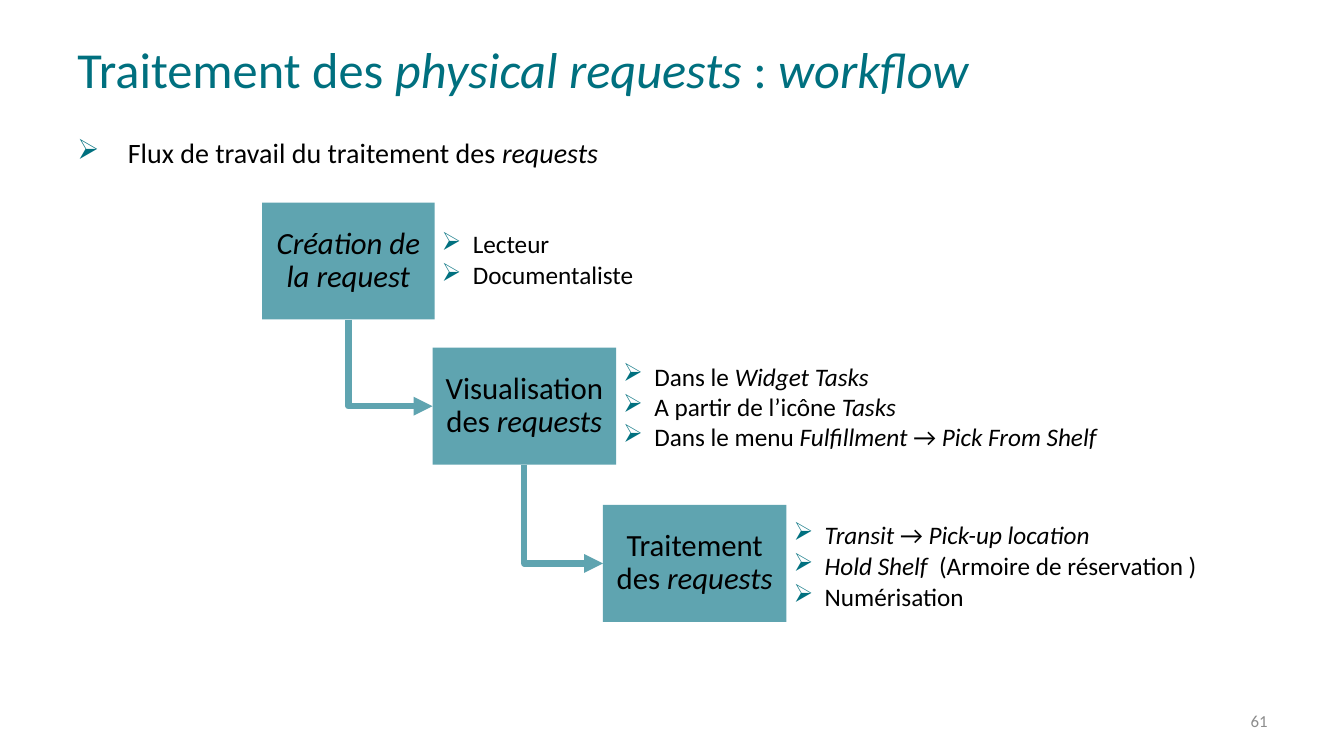
from lxml.etree import SubElement
from pptx import Presentation
from pptx.dml.color import RGBColor
from pptx.enum.shapes import MSO_CONNECTOR, MSO_SHAPE
from pptx.enum.text import MSO_ANCHOR, PP_ALIGN
from pptx.oxml.ns import qn
from pptx.util import Inches, Pt

TEAL, STEP_FILL, BLACK, GREY = "00707F", "5FA4B0", "000000", "8C8C8C"


def color(value):
    return RGBColor.from_string(value)


class SlideBuilder:
    """Draws styled elements on one slide; asterisks in text switch italics."""

    def __init__(self, page, font="Calibri"):
        self.page = page
        self.font = font

    def fill_text(self, frame, lines, size, ink, align=PP_ALIGN.LEFT, spacing=None,
                  gap=0, indent=None, inset=None, anchor=MSO_ANCHOR.MIDDLE):
        frame.word_wrap = True
        frame.vertical_anchor = anchor
        if inset is not None:
            frame.margin_left = frame.margin_right = Inches(inset)
            frame.margin_top = frame.margin_bottom = Inches(inset)
        for index, line in enumerate(lines):
            para = frame.add_paragraph() if index else frame.paragraphs[0]
            para.alignment = align
            if spacing:
                para.line_spacing = spacing
            if index and gap:
                para.space_before = Pt(gap)
            if indent:
                self.bullet(para, indent)
            for position, part in enumerate(line.split("*")):
                if part:
                    span = para.add_run()
                    span.text = part
                    span.font.name = self.font
                    span.font.size = Pt(size)
                    span.font.italic = position % 2 == 1
                    span.font.color.rgb = color(ink)

    def bullet(self, para, indent):
        properties = para._p.get_or_add_pPr()
        properties.set("marL", str(Inches(indent)))
        properties.set("indent", str(-Inches(indent)))
        tint = SubElement(properties, qn("a:buClr"))
        SubElement(tint, qn("a:srgbClr")).set("val", TEAL)
        SubElement(properties, qn("a:buChar")).set("char", "➢")

    def text(self, left, top, width, height, lines, size, ink=BLACK, **style):
        box = self.page.shapes.add_textbox(
            Inches(left), Inches(top), Inches(width), Inches(height))
        self.fill_text(box.text_frame, lines, size, ink, **style)

    def step(self, left, top, width, height, label):
        box = self.page.shapes.add_shape(
            MSO_SHAPE.RECTANGLE, Inches(left), Inches(top), Inches(width), Inches(height))
        box.shadow.inherit = False
        box.fill.solid()
        box.fill.fore_color.rgb = color(STEP_FILL)
        box.line.fill.background()
        self.fill_text(box.text_frame, [label], 22, BLACK,
                       align=PP_ALIGN.CENTER, spacing=0.9, inset=0.09)

    def arrow(self, left, top, right, bottom):
        middle_x, middle_y = (left + right) / 2, (top + bottom) / 2
        half_run, half_drop = (right - left) / 2, (bottom - top) / 2
        link = self.page.shapes.add_connector(
            MSO_CONNECTOR.ELBOW,
            Inches(middle_x + half_drop), Inches(middle_y - half_run),
            Inches(middle_x - half_drop), Inches(middle_y + half_run))
        link.line.color.rgb = color(STEP_FILL)
        link.line.width = Pt(4.5)
        properties = link._element.spPr
        properties.find(qn("a:xfrm")).set("rot", "16200000")
        properties.find(qn("a:prstGeom")).set("prst", "bentConnector2")
        SubElement(properties.find(qn("a:ln")), qn("a:tailEnd")).set("type", "triangle")
        SubElement(properties, qn("a:effectLst"))


def main():
    deck = Presentation()
    deck.slide_width, deck.slide_height = Inches(13.33), Inches(7.5)
    builder = SlideBuilder(deck.slides.add_slide(deck.slide_layouts[6]))

    builder.text(0.67, 0.34, 12, 0.68,
                 ["Traitement des *physical requests* : *workflow*"], 36, TEAL)
    builder.text(0.67, 1.3, 12, 5.4, ["Flux de travail du traitement des *requests*"],
                 20, indent=0.5, anchor=MSO_ANCHOR.TOP)
    builder.text(9.56, 6.95, 3.11, 0.4, ["61"], 12, GREY, align=PP_ALIGN.RIGHT)

    step_height = 1.16
    tight = {"spacing": 0.9, "gap": 2.7}
    steps = [
        (2.6, 2.01, 1.71, "*Création de la request*", 2.05, 2.23, 1.08, tight,
         ["Lecteur", "Documentaliste"]),
        (4.29, 3.45, 1.82, "Visualisation des *requests*", 3.49, 5.12, 1.08, {},
         ["Dans le *Widget Tasks*", "A partir de l’icône* Tasks*",
          "Dans le menu *Fulfillment *→ *Pick From Shelf*"]),
        (5.98, 5.01, 1.82, "Traitement des *requests*", 4.87, 4.22, 1.52, tight,
         ["*Transit *→ *Pick-up location*",
          "*Hold Shelf * (Armoire de réservation )", "Numérisation"]),
    ]
    for left, top, width, label, note_top, note_width, note_height, style, notes in steps:
        builder.step(left, top, width, step_height, label)
        builder.text(left + width, note_top, note_width, note_height, notes, 18,
                     indent=0.31, inset=0.07, **style)
    for current, following in zip(steps, steps[1:]):
        builder.arrow(current[0] + current[2] / 2, current[1] + step_height,
                      following[0], following[1] + step_height / 2)

    deck.save("out.pptx")


if __name__ == "__main__":
    main()
